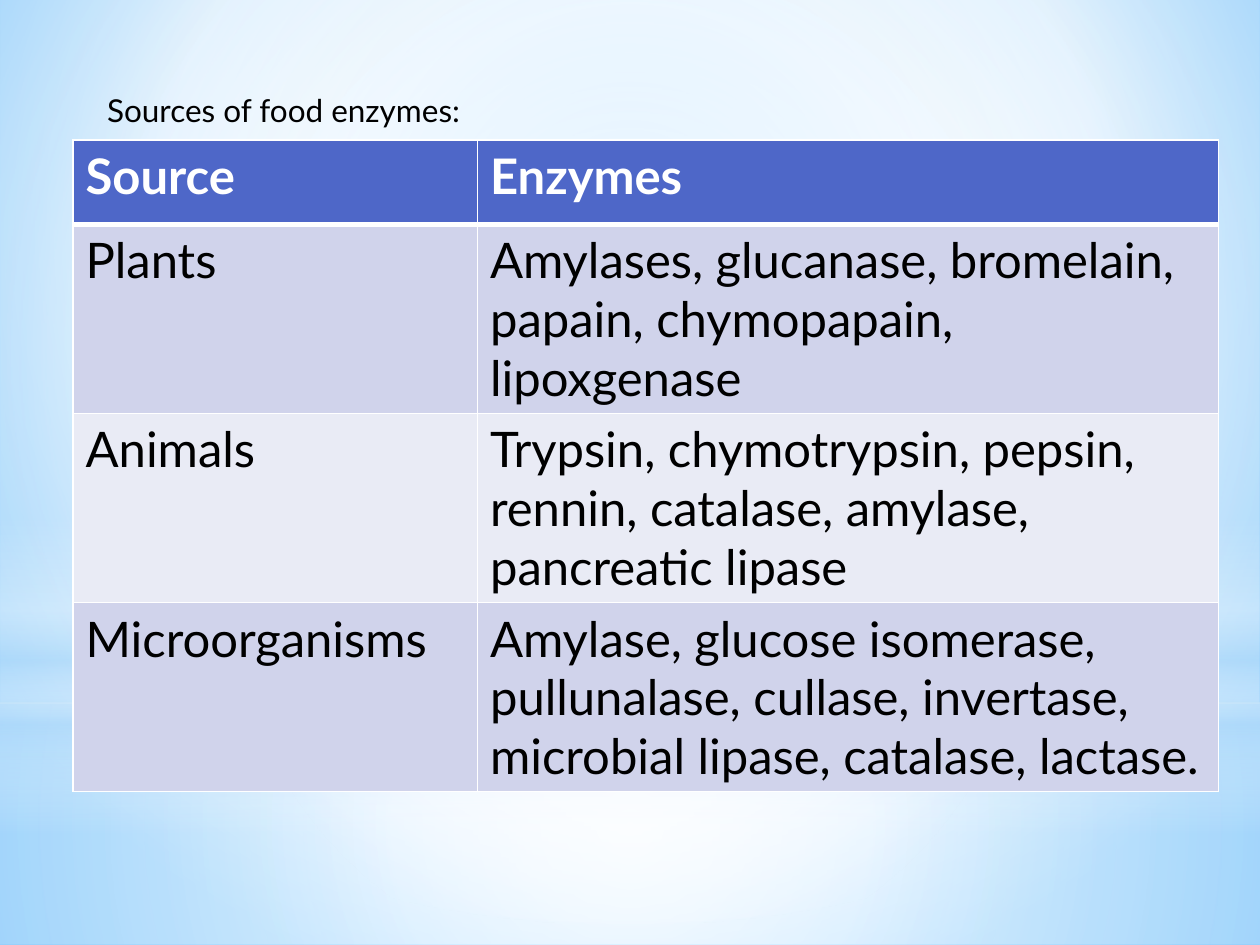
import pptx
import pptx.util
import pptx.dml.color
import pptx.enum.shapes
import pptx.enum.text
import pptx.oxml
import pptx.oxml.ns

RGB = pptx.dml.color.RGBColor
WHITE = RGB(0xFF, 0xFF, 0xFF)
BLACK = RGB(0, 0, 0)
HEADER = RGB(0x4E, 0x67, 0xC8)
BAND_DARK = RGB(0xD0, 0xD3, 0xEB)
BAND_LIGHT = RGB(0xE9, 0xEB, 0xF5)
SKY = RGB(0xB4, 0xDC, 0xFA)
BG_INNER = RGB(0x9E, 0xD5, 0xFF)
BG_OUTER = RGB(0x5B, 0xB9, 0xFF)

FONT = "Lato"
WIDTH, HEIGHT = 10, 7.5
CENTER = (50, 50, 50, 50)
SHAPES = pptx.enum.shapes.MSO_SHAPE

ROWS = [
    ("Source", "Enzymes"),
    ("Plants", "Amylases, glucanase, bromelain, papain, chymopapain, lipoxgenase"),
    ("Animals", "Trypsin, chymotrypsin, pepsin, rennin, catalase, amylase, pancreatic lipase"),
    ("Microorganisms", "Amylase, glucose isomerase, pullunalase, cullase, invertase, "
                       "microbial lipase, catalase, lactase."),
]


def inches(*values):
    return [pptx.util.Inches(v) for v in values]


def set_gradient(fill, element, stops, focus=None):
    fill.solid()
    solid = element.find(".//" + pptx.oxml.ns.qn("a:solidFill"))
    marks = "".join(
        f'<a:gs pos="{pos * 1000}"><a:srgbClr val="{color}">'
        f'<a:alpha val="{alpha * 1000}"/></a:srgbClr></a:gs>'
        for pos, color, alpha in stops)
    if focus:
        l, t, r, b = (v * 1000 for v in focus)
        shade = (f'<a:path path="circle"><a:fillToRect l="{l}" t="{t}" '
                 f'r="{r}" b="{b}"/></a:path>')
    else:
        shade = '<a:lin ang="5400000" scaled="0"/>'
    gradient = pptx.oxml.parse_xml(
        f'<a:gradFill {pptx.oxml.ns.nsdecls("a")} rotWithShape="1">'
        f'<a:gsLst>{marks}</a:gsLst>{shade}</a:gradFill>')
    solid.getparent().replace(solid, gradient)


def add_glow(s, kind, top, height, stops, focus=CENTER):
    sp = s.shapes.add_shape(kind, *inches(0, top, WIDTH, height))
    sp.shadow.inherit = False
    sp.line.fill.background()
    set_gradient(sp.fill, sp.element, stops, focus)


def add_backdrop(s):
    set_gradient(s.background.fill, s.element,
                 [(0, BG_INNER, 100), (60, WHITE, 100), (100, BG_OUTER, 100)],
                 (20, 10, 20, 60))
    horizon = 5.58
    add_glow(s, SHAPES.RECTANGLE, horizon, HEIGHT - horizon,
             [(0, WHITE, 91), (37, WHITE, 76), (100, SKY, 79)])
    add_glow(s, SHAPES.RECTANGLE, 0, horizon,
             [(0, WHITE, 89), (48, WHITE, 62), (100, SKY, 79)])
    add_glow(s, SHAPES.RECTANGLE, 4.12, HEIGHT / 3,
             [(0, WHITE, 0), (29, WHITE, 30), (45, SKY, 40),
              (55, WHITE, 26), (65, SKY, 60), (100, WHITE, 0)], None)
    add_glow(s, SHAPES.OVAL, 1.75, horizon, [(0, WHITE, 100), (56, WHITE, 0)])


def style_text(p, size, color, bold=False):
    p.font.name = FONT
    p.font.size = pptx.util.Pt(size)
    p.font.color.rgb = color
    p.font.bold = bold


def add_title(s, text):
    sp = s.shapes.title
    sp.left, sp.top, sp.width, sp.height = inches(0.75, 0.67, 9.17, 0.4)
    tf = sp.text_frame
    tf.text = text
    tf.word_wrap = True
    tf.auto_size = pptx.enum.text.MSO_AUTO_SIZE.NONE
    tf.vertical_anchor = pptx.enum.text.MSO_ANCHOR.TOP
    p = tf.paragraphs[0]
    p.alignment = pptx.enum.text.PP_ALIGN.LEFT
    style_text(p, 18, BLACK)
    s.shapes._spTree.append(sp.element)


def set_borders(cell, widths):
    tcPr = cell._tc.get_or_add_tcPr()
    for i, (side, width) in enumerate(zip("LRTB", widths)):
        tcPr.insert(i, pptx.oxml.parse_xml(
            f'<a:ln{side} {pptx.oxml.ns.nsdecls("a")} w="{pptx.util.Pt(width)}">'
            f'<a:solidFill><a:srgbClr val="{WHITE}"/></a:solidFill></a:ln{side}>'))


def add_enzyme_table(s):
    columns, heights = (3.21, 5.88), (0.67, 1.5, 1.5, 1.5)
    table = s.shapes.add_table(
        len(ROWS), len(columns),
        *inches(0.58, 1.11, sum(columns), sum(heights))).table
    for column, width in zip(table.columns, columns):
        column.width = pptx.util.Inches(width)
    for i, texts in enumerate(ROWS):
        table.rows[i].height = pptx.util.Inches(heights[i])
        head = i == 0
        band = HEADER if head else (BAND_LIGHT, BAND_DARK)[i % 2]
        for j, text in enumerate(texts):
            cell = table.cell(i, j)
            cell.text = text
            cell.fill.solid()
            cell.fill.fore_color.rgb = band
            style_text(cell.text_frame.paragraphs[0], 28,
                       WHITE if head else BLACK, head)
            set_borders(cell, (1, 1, 3 if i == 1 else 1, 3 if head else 1))


def main():
    prs = pptx.Presentation()
    prs.slide_width, prs.slide_height = inches(WIDTH, HEIGHT)
    s = prs.slides.add_slide(prs.slide_layouts[5])
    add_backdrop(s)
    add_title(s, "Sources of food enzymes:")
    add_enzyme_table(s)
    prs.save("out.pptx")


if __name__ == "__main__":
    main()
